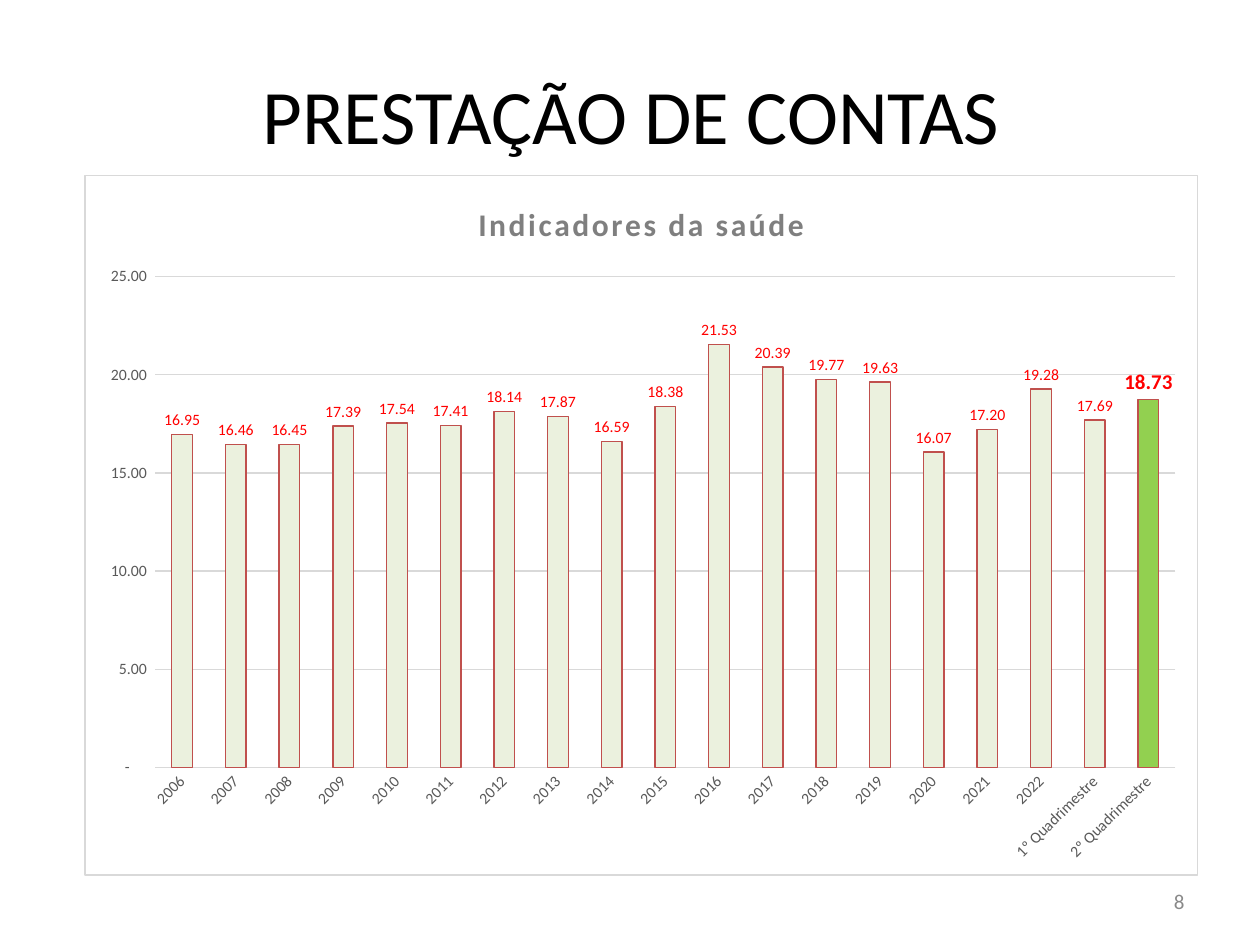
from lxml import etree
from pptx import Presentation
from pptx.chart.data import CategoryChartData
from pptx.dml.color import RGBColor
from pptx.enum.chart import XL_CHART_TYPE, XL_LABEL_POSITION, XL_TICK_MARK
from pptx.enum.shapes import MSO_SHAPE
from pptx.enum.text import MSO_ANCHOR, PP_ALIGN
from pptx.oxml import parse_xml
from pptx.oxml.ns import nsdecls, qn
from pptx.util import Inches, Pt

COLUMN = XL_CHART_TYPE.COLUMN_CLUSTERED
OUTSIDE = XL_LABEL_POSITION.OUTSIDE_END
NO_TICK = XL_TICK_MARK.NONE
RECTANGLE = MSO_SHAPE.RECTANGLE
MIDDLE = MSO_ANCHOR.MIDDLE
CENTER, RIGHT = PP_ALIGN.CENTER, PP_ALIGN.RIGHT

BLACK = RGBColor(0x00, 0x00, 0x00)
WHITE = RGBColor(0xFF, 0xFF, 0xFF)
PAGE_GRAY = RGBColor(0x89, 0x89, 0x89)
TITLE_GRAY = RGBColor(0x7F, 0x7F, 0x7F)
AXIS_GRAY = RGBColor(0x59, 0x59, 0x59)
GRID_GRAY = RGBColor(0xD9, 0xD9, 0xD9)
BAR_FILL = RGBColor(0xEB, 0xF1, 0xDE)
BAR_LINE = RGBColor(0xC0, 0x50, 0x4D)
LATEST_FILL = RGBColor(0x92, 0xD0, 0x50)
LABEL_RED = RGBColor(0xFF, 0x00, 0x00)

FONT = "Calibri"
NUMBER_FORMAT = '_(* #,##0.00_);_(* \\(#,##0.00\\);_(* "-"??_);_(@_)'
YEARS = [str(year) for year in range(2006, 2023)]
CATEGORIES = YEARS + ["1º Quadrimestre", "2º Quadrimestre"]
VALUES = [16.95, 16.46, 16.45, 17.39, 17.54, 17.41, 18.14, 17.87, 16.59, 18.38,
          21.53, 20.39, 19.77, 19.63, 16.07, 17.20, 19.28, 17.69, 18.73]


def style_font(font, size, color, bold=False):
    font.name = FONT
    font.size = Pt(size)
    font.bold = bold
    font.color.rgb = color


def style_fill(fill, color):
    fill.solid()
    fill.fore_color.rgb = color


def style_line(line, color):
    line.color.rgb = color
    line.width = Pt(0.75)


def write_text(shape, text, size, color, align):
    frame = shape.text_frame
    frame.word_wrap = True
    frame.vertical_anchor = MIDDLE
    para = frame.paragraphs[0]
    para.alignment = align
    span = para.add_run()
    span.text = text
    style_font(span.font, size, color)


def add_heading(page, bounds, text):
    panel = page.shapes.add_shape(RECTANGLE, *map(Inches, bounds))
    panel.shadow.inherit = False
    style_fill(panel.fill, WHITE)
    panel.line.fill.background()
    write_text(panel, text, 44, BLACK, CENTER)


def add_page_number(page, bounds, text):
    box = page.shapes.add_textbox(*map(Inches, bounds))
    write_text(box, text, 12, PAGE_GRAY, RIGHT)


def style_title(chart, text):
    chart.has_title = True
    span = chart.chart_title.text_frame.paragraphs[0].add_run()
    span.text = text
    style_font(span.font, 18, TITLE_GRAY, bold=True)
    span._r.get_or_add_rPr().set("spc", "150")
    chart.chart_title.include_in_layout = False


def style_axes(chart):
    for axis in (chart.category_axis, chart.value_axis):
        axis.major_tick_mark = axis.minor_tick_mark = NO_TICK
        axis.format.line.fill.background()
        style_font(axis.tick_labels.font, 9, AXIS_GRAY)

    # Slanted category names
    body = chart.category_axis._element.find(qn("c:txPr")).find(qn("a:bodyPr"))
    body.set("rot", "-2700000")
    body.set("vert", "horz")

    values = chart.value_axis
    values.minimum_scale, values.maximum_scale, values.major_unit = 0, 25, 5
    values.tick_labels.number_format = NUMBER_FORMAT
    values.tick_labels.number_format_is_linked = False
    style_line(values.major_gridlines.format.line, GRID_GRAY)


def style_bars(plot):
    plot.gap_width = 160
    plot.vary_by_categories = False
    series = plot.series[0]
    style_fill(series.format.fill, BAR_FILL)
    style_line(series.format.line, BAR_LINE)

    labels = series.data_labels
    labels.show_value = True
    labels.number_format = NUMBER_FORMAT
    labels.number_format_is_linked = False
    labels.position = OUTSIDE
    style_font(labels.font, 9, LABEL_RED)

    # Latest period stands out
    latest = series.points[len(VALUES) - 1]
    style_fill(latest.format.fill, LATEST_FILL)
    style_line(latest.format.line, BAR_LINE)
    style_font(latest.data_label.font, 12, LABEL_RED, bold=True)
    latest.data_label.position = OUTSIDE


def frame_chart(chart):
    frame = parse_xml(f'<c:spPr {nsdecls("c", "a")}/>')
    fill = etree.SubElement(frame, qn("a:solidFill"))
    etree.SubElement(fill, qn("a:srgbClr"), val=str(WHITE))
    border = etree.SubElement(frame, qn("a:ln"), w=str(Pt(0.75)))
    stroke = etree.SubElement(border, qn("a:solidFill"))
    etree.SubElement(stroke, qn("a:srgbClr"), val=str(GRID_GRAY))
    chart._chartSpace.find(qn("c:chart")).addnext(frame)


def add_indicator_chart(page, bounds):
    data = CategoryChartData(number_format=NUMBER_FORMAT)
    data.categories = CATEGORIES
    data.add_series("Series 1", VALUES)
    chart = page.shapes.add_chart(COLUMN, *map(Inches, bounds), data).chart
    style_font(chart.font, 10, BLACK)
    chart.has_legend = False
    style_title(chart, "Indicadores da saúde")
    style_axes(chart)
    style_bars(chart.plots[0])
    frame_chart(chart)


def main():
    deck = Presentation()
    deck.slide_width, deck.slide_height = Inches(10), Inches(7.5)
    page = deck.slides.add_slide(deck.slide_layouts[6])

    # Page number, heading, chart
    add_page_number(page, (7.17, 6.95, 2.33, 0.4), "8")
    add_heading(page, (0.51, 0.28, 9, 1.25), "PRESTAÇÃO DE CONTAS")
    add_indicator_chart(page, (0.67, 1.39, 8.84, 5.56))

    deck.save("out.pptx")


if __name__ == "__main__":
    main()
